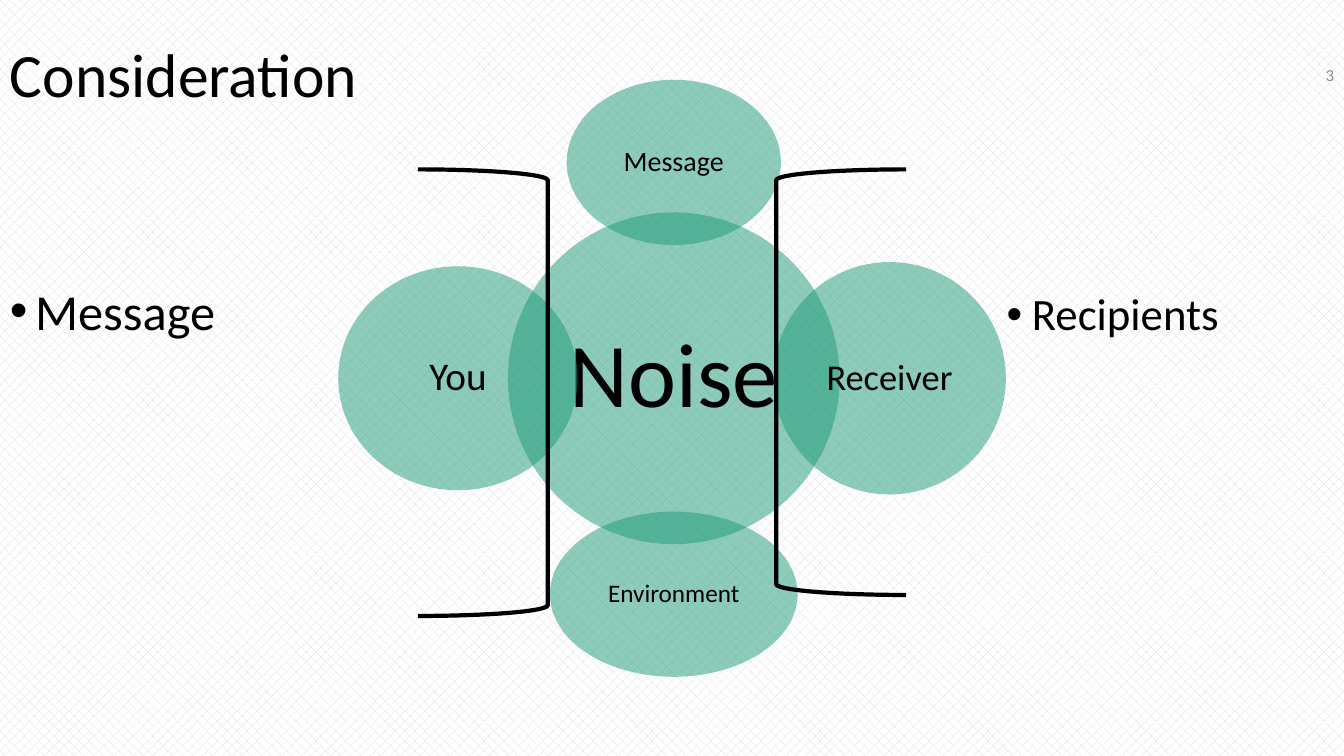
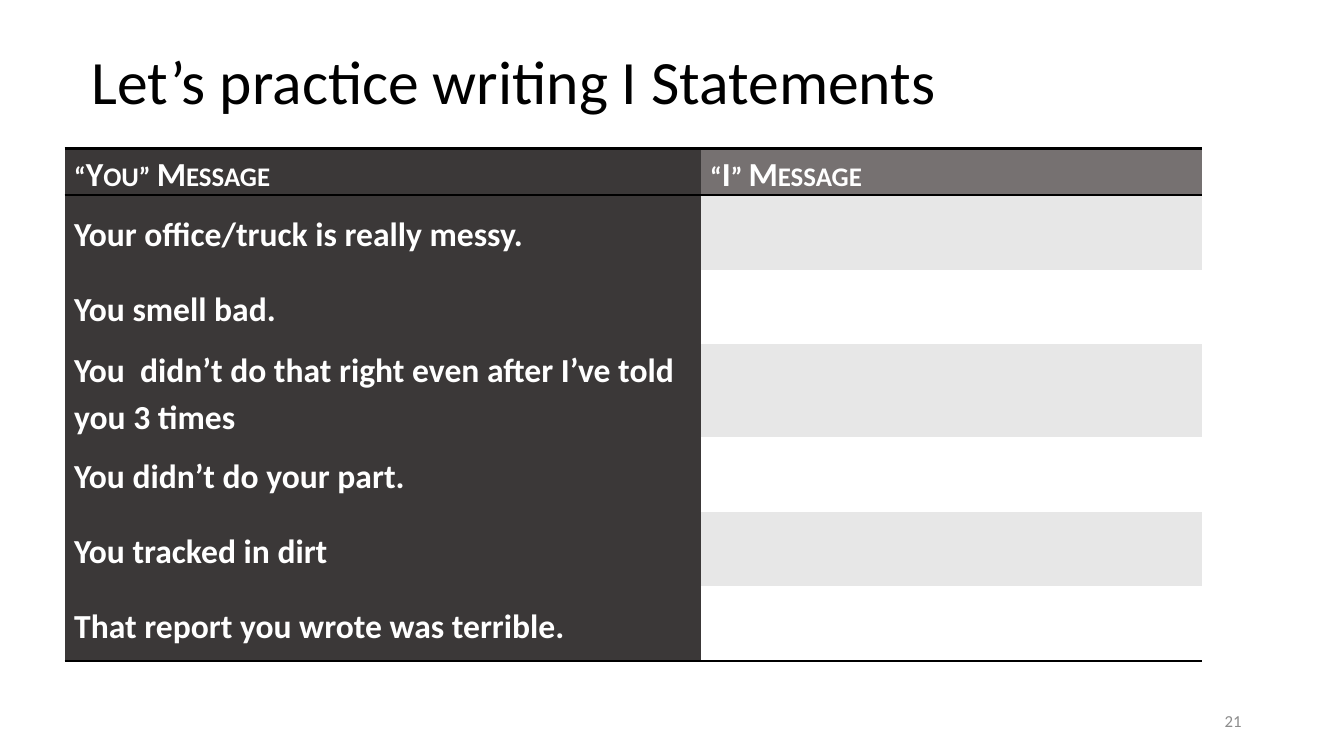
from lxml.etree import SubElement
from pptx import Presentation
from pptx.dml.color import RGBColor
from pptx.enum.dml import MSO_PATTERN
from pptx.enum.shapes import MSO_SHAPE as Shape
from pptx.enum.text import MSO_ANCHOR as Anchor, PP_ALIGN as Align
from pptx.oxml.ns import qn
from pptx.util import Pt

FONT = "Calibri"
BLACK, WHITE, GRAY = "000000", "FFFFFF", "8C8C8C"
GREEN, DOT = "1D9A78", "D9D9D9"
DARK, MEDIUM, BAND = "3B3838", "767171", "E7E7E7"
NO_TABLE_STYLE = "{2D5ABB26-0587-4C30-8999-92F81FD0307C}"


def color(value):
    return RGBColor.from_string(value)


def points(*lengths):
    return [Pt(length) for length in lengths]


def write_text(frame, text, size, ink=BLACK, bold=False, align=Align.LEFT,
               anchor=Anchor.MIDDLE, wrap=True, insets=(7.2, 3.6),
               spacing=None, before=0, after=0, bullet=False, small_caps=False):
    frame.word_wrap = wrap
    frame.vertical_anchor = anchor
    frame.margin_left = frame.margin_right = Pt(insets[0])
    frame.margin_top = frame.margin_bottom = Pt(insets[1])
    paragraph = frame.paragraphs[0]
    paragraph.alignment = align
    paragraph.space_before, paragraph.space_after = Pt(before), Pt(after)
    if spacing:
        paragraph.line_spacing = spacing
    if bullet:
        properties = paragraph._p.get_or_add_pPr()
        properties.set("marL", str(Pt(18)))
        properties.set("indent", str(Pt(-18)))
        SubElement(properties, qn("a:buFont"), typeface="Arial")
        SubElement(properties, qn("a:buChar"), char="•")
    run = paragraph.add_run()
    run.text = text
    run.font.name, run.font.size, run.font.bold = FONT, Pt(size), bold
    run.font.color.rgb = color(ink)
    if small_caps:
        run._r.get_or_add_rPr().set("cap", "small")


def add_text(slide, box, text, size, **text_format):
    write_text(slide.shapes.add_textbox(*points(*box)).text_frame, text, size, **text_format)


def add_title(slide, box, text):
    add_text(slide, box, text, 44, spacing=0.9)


def add_number(slide, box, number):
    add_text(slide, box, str(number), 12, ink=GRAY, align=Align.RIGHT)


def add_circle(slide, center, size, label, label_size):
    (x, y), (width, height) = center, size
    box = points(x - width / 2, y - height / 2, width, height)
    circle = slide.shapes.add_shape(Shape.OVAL, *box)
    circle.shadow.inherit = False
    circle.line.fill.background()
    circle.fill.solid()
    circle.fill.fore_color.rgb = color(GREEN)
    fill_color = circle.element.xpath("./p:spPr/a:solidFill/a:srgbClr")[0]
    SubElement(fill_color, qn("a:alpha"), val="50000")
    write_text(circle.text_frame, label, label_size, align=Align.CENTER,
               wrap=False, insets=(0, 0), spacing=0.9)


def add_noise_diagram(slide, center, reach):
    """Draw the hub and four satellites whose centers lie at reach from it."""
    x, y = center
    circles = [
        ((0, 0), (237, 237), "Noise", 65),
        ((0, -1), (153, 118), "Message", 20),
        ((1, 0), (166, 166), "Receiver", 26),
        ((0, 1), (177, 118), "Environment", 18),
        ((-1, 0), (171, 160), "You", 28),
    ]
    for (across, down), size, label, label_size in circles:
        add_circle(slide, (x + across * reach, y + down * reach), size, label, label_size)


def add_bracket(slide, kind, box):
    bracket = slide.shapes.add_shape(kind, *points(*box))
    bracket.shadow.inherit = False
    bracket.fill.background()
    bracket.line.color.rgb = color(BLACK)
    bracket.line.width = Pt(3)


def add_rule(cell, side):
    line = SubElement(cell._tc.get_or_add_tcPr(), qn(f"a:{side}"), w=str(Pt(2)))
    fill = SubElement(line, qn("a:solidFill"))
    SubElement(fill, qn("a:srgbClr"), val=BLACK)


def add_message_table(slide, box, widths, row_heights, headings, messages):
    rows = [headings] + [(message, "") for message in messages]
    frame = slide.shapes.add_table(len(rows), len(widths), *points(*box))
    table = frame.table
    table._tbl.tblPr.find(qn("a:tableStyleId")).text = NO_TABLE_STYLE
    for column, width in zip(table.columns, widths):
        column.width = Pt(width)
    for row_index, texts in enumerate(rows):
        is_header = row_index == 0
        table.rows[row_index].height = Pt(row_heights[min(row_index, 1)])
        right_fill = MEDIUM if is_header else BAND if row_index % 2 else WHITE
        for column_index, (text, fill) in enumerate(zip(texts, (DARK, right_fill))):
            cell = table.cell(row_index, column_index)
            if is_header:
                add_rule(cell, "lnT")
            if is_header or row_index == len(rows) - 1:
                add_rule(cell, "lnB")
            cell.fill.solid()
            cell.fill.fore_color.rgb = color(fill)
            if text:
                cell.margin_left = cell.margin_right = Pt(6.75)
                cell.margin_top = cell.margin_bottom = 0
                cell.vertical_anchor = Anchor.TOP if is_header else Anchor.MIDDLE
                write_cell(cell, text, is_header)


def write_cell(cell, text, is_header):
    paragraph = cell.text_frame.paragraphs[0]
    paragraph.line_spacing, paragraph.space_after = 1.15, Pt(10)
    run = paragraph.add_run()
    run.text = text
    run.font.name, run.font.size, run.font.bold = FONT, Pt(24), True
    run.font.color.rgb = color(WHITE)
    if is_header:
        run._r.get_or_add_rPr().set("cap", "small")


def build_consideration(slide):
    background = slide.background.fill
    background.patterned()
    background.pattern = MSO_PATTERN.PERCENT_30
    background.fore_color.rgb, background.back_color.rgb = color(DOT), color(WHITE)
    add_number(slide, (894, 23, 66, 60.5), 3)
    add_title(slide, (0, 28, 695, 55.5), "Consideration")
    for left, text, size, spacing in ((0, "Message", 36, 0.8), (712, "Recipients", 32, 0.9)):
        add_text(slide, (left, 205, 248, 45.5), text, size, anchor=Anchor.TOP,
                 spacing=spacing, before=10, bullet=True)
    add_noise_diagram(slide, (481.3, 270.2), 154.2)
    add_bracket(slide, Shape.LEFT_BRACKET, (554.4, 121, 92.9, 304))
    add_bracket(slide, Shape.RIGHT_BRACKET, (298.4, 121, 92.9, 319))


def build_practice(slide):
    slide.background.fill.solid()
    slide.background.fill.fore_color.rgb = color(WHITE)
    add_title(slide, (58.3, 8, 828, 104.4), "Let’s practice writing I Statements")
    add_number(slide, (678, 500.5, 216, 28.8), 21)
    add_message_table(
        slide, (46.2, 106, 812, 363), (454.3, 357.8), (21.6, 53.4),
        ("“You” Message", "“I” Message"),
        ("Your office/truck is really messy.",
         "You smell bad.",
         "You  didn’t do that right even after I’ve told you 3 times",
         "You didn’t do your part.",
         "You tracked in dirt",
         "That report you wrote was terrible."))


def main():
    presentation = Presentation()
    presentation.slide_width, presentation.slide_height = points(960, 540)
    blank = presentation.slide_layouts[6]
    for build in (build_consideration, build_practice):
        build(presentation.slides.add_slide(blank))
    presentation.save("out.pptx")


if __name__ == "__main__":
    main()
